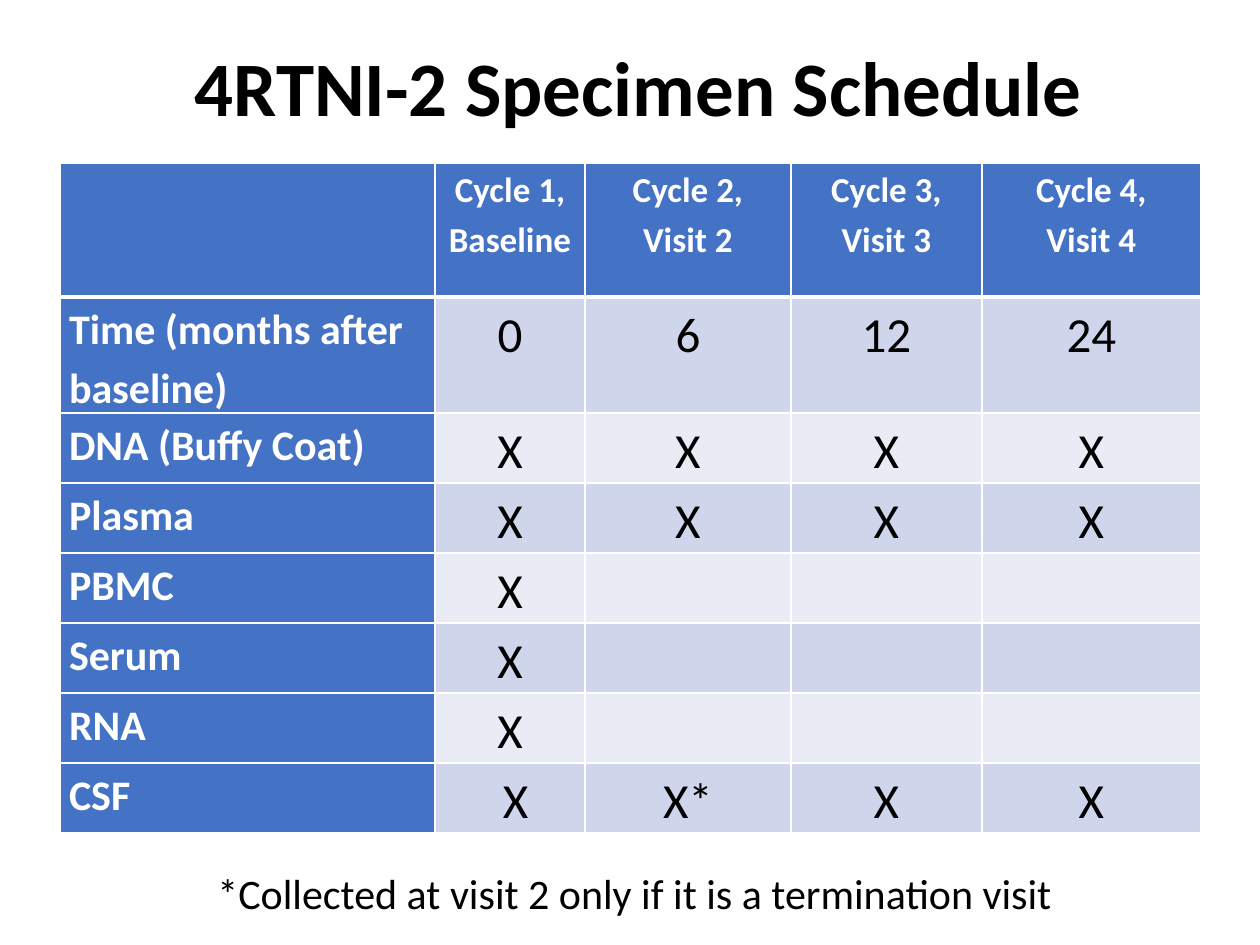
from dataclasses import dataclass

from lxml import etree
from pptx import Presentation
from pptx.dml.color import RGBColor
from pptx.enum.text import MSO_ANCHOR, MSO_AUTO_SIZE, PP_ALIGN
from pptx.oxml.ns import qn
from pptx.util import Emu, Pt

LEFT, CENTER = PP_ALIGN.LEFT, PP_ALIGN.CENTER
TOP, MIDDLE = MSO_ANCHOR.TOP, MSO_ANCHOR.MIDDLE
FIT_SHAPE = MSO_AUTO_SIZE.SHAPE_TO_FIT_TEXT
PX_PER_INCH = 126
EMU_PER_PX = 914400 / PX_PER_INCH


@dataclass(frozen=True)
class Theme:
    font: str = "Calibri"
    black: str = "000000"
    white: str = "FFFFFF"
    blue: str = "4472C4"
    bands: tuple[str, str] = ("CFD5EA", "E9EBF5")
    title_size: int = 44
    header_size: int = 20
    label_size: int = 24
    mark_size: int = 28
    note_size: int = 24
    thin: int = 1
    thick: int = 3


@dataclass(frozen=True)
class Area:
    left: int
    top: int
    width: int
    height: int


@dataclass(frozen=True)
class Specimen:
    label: str
    marks: tuple[str, ...]


THEME = Theme()
TITLE_AREA = Area(96, 0, 1086, 183)
NOTE_AREA = Area(205, 861, 867, 63)
TABLE_LEFT, TABLE_TOP = 60, 163
COLUMN_WIDTHS = (375, 150, 206, 191, 219)
ROW_HEIGHTS = (134, 113) + (70,) * 6
CELL_INSET = 9

HEADERS = ("", "Cycle 1, Baseline", "Cycle 2,\nVisit 2", "Cycle 3,\nVisit 3", "Cycle 4,\nVisit 4")
EVERY_VISIT = ("X",) * 4
BASELINE_ONLY = ("X", "", "", "")
SPECIMENS = (
    Specimen("Time (months after baseline)", ("0", "6", "12", "24")),
    Specimen("DNA (Buffy Coat)", EVERY_VISIT),
    Specimen("Plasma", EVERY_VISIT),
    Specimen("PBMC", BASELINE_ONLY),
    Specimen("Serum", BASELINE_ONLY),
    Specimen("RNA", BASELINE_ONLY),
    Specimen("CSF", (" X", "X*", "X", "X")),
)


def px(length: int) -> Emu:
    return Emu(round(length * EMU_PER_PX))


def write_text(frame, text: str, *, size: int, color: str, bold: bool = False,
               align=LEFT, spacing: float = 1.0) -> None:
    for index, line in enumerate(text.split("\n")):
        para = frame.paragraphs[0] if index == 0 else frame.add_paragraph()
        para.alignment = align
        para.line_spacing = spacing
        span = para.add_run()
        span.text = line
        span.font.name = THEME.font
        span.font.size = Pt(size)
        span.font.bold = bold
        span.font.color.rgb = RGBColor.from_string(color)


def add_text_box(page, area: Area, *, anchor=TOP, wrap: bool = True):
    box = page.shapes.add_textbox(px(area.left), px(area.top), px(area.width), px(area.height))
    box.text_frame.word_wrap = wrap
    box.text_frame.vertical_anchor = anchor
    return box


def set_borders(cell, *, top: int, bottom: int) -> None:
    properties = cell._tc.get_or_add_tcPr()
    widths = {"a:lnL": THEME.thin, "a:lnR": THEME.thin, "a:lnT": top, "a:lnB": bottom}
    for index, (tag, width) in enumerate(widths.items()):
        line = etree.Element(qn(tag), w=str(Pt(width)))
        fill = etree.SubElement(line, qn("a:solidFill"))
        etree.SubElement(fill, qn("a:srgbClr"), val=THEME.white)
        properties.insert(index, line)  # border lines come before the cell fill


def draw_cell(cell, text: str, *, fill: str, top: int = THEME.thin,
              bottom: int = THEME.thin, **text_format) -> None:
    cell.fill.solid()
    cell.fill.fore_color.rgb = RGBColor.from_string(fill)
    set_borders(cell, top=top, bottom=bottom)
    cell.margin_left = cell.margin_right = px(CELL_INSET)
    cell.margin_top = cell.margin_bottom = 0
    if text:
        write_text(cell.text_frame, text, spacing=1.15, **text_format)


def draw_schedule(page) -> None:
    frame = page.shapes.add_table(
        len(ROW_HEIGHTS), len(COLUMN_WIDTHS), px(TABLE_LEFT), px(TABLE_TOP),
        px(sum(COLUMN_WIDTHS)), px(sum(ROW_HEIGHTS)))
    table = frame.table
    for column, width in zip(table.columns, COLUMN_WIDTHS):
        column.width = px(width)
    for row, height in zip(table.rows, ROW_HEIGHTS):
        row.height = px(height)

    # Visit headers
    for column, text in enumerate(HEADERS):
        draw_cell(table.cell(0, column), text, fill=THEME.blue, bottom=THEME.thick,
                  size=THEME.header_size, color=THEME.white, bold=True, align=CENTER)

    # Specimen rows in alternating bands
    for row, specimen in enumerate(SPECIMENS, start=1):
        top = THEME.thick if row == 1 else THEME.thin
        draw_cell(table.cell(row, 0), specimen.label, fill=THEME.blue, top=top,
                  size=THEME.label_size, color=THEME.white, bold=True)
        for column, mark in enumerate(specimen.marks, start=1):
            draw_cell(table.cell(row, column), mark, fill=THEME.bands[(row - 1) % 2], top=top,
                      size=THEME.mark_size, color=THEME.black, align=CENTER)


def main() -> None:
    deck = Presentation()
    deck.slide_width, deck.slide_height = px(1260), px(945)
    page = deck.slides.add_slide(deck.slide_layouts[6])

    # Title
    title = add_text_box(page, TITLE_AREA, anchor=MIDDLE)
    write_text(title.text_frame, "4RTNI-2 Specimen Schedule", size=THEME.title_size,
               color=THEME.black, bold=True, align=CENTER, spacing=0.9)

    # Schedule table
    draw_schedule(page)

    # Footnote
    note = add_text_box(page, NOTE_AREA, wrap=False)
    note.text_frame.auto_size = FIT_SHAPE
    write_text(note.text_frame, "*Collected at visit 2 only if it is a termination visit",
               size=THEME.note_size, color=THEME.black)

    deck.save("out.pptx")


if __name__ == "__main__":
    main()
